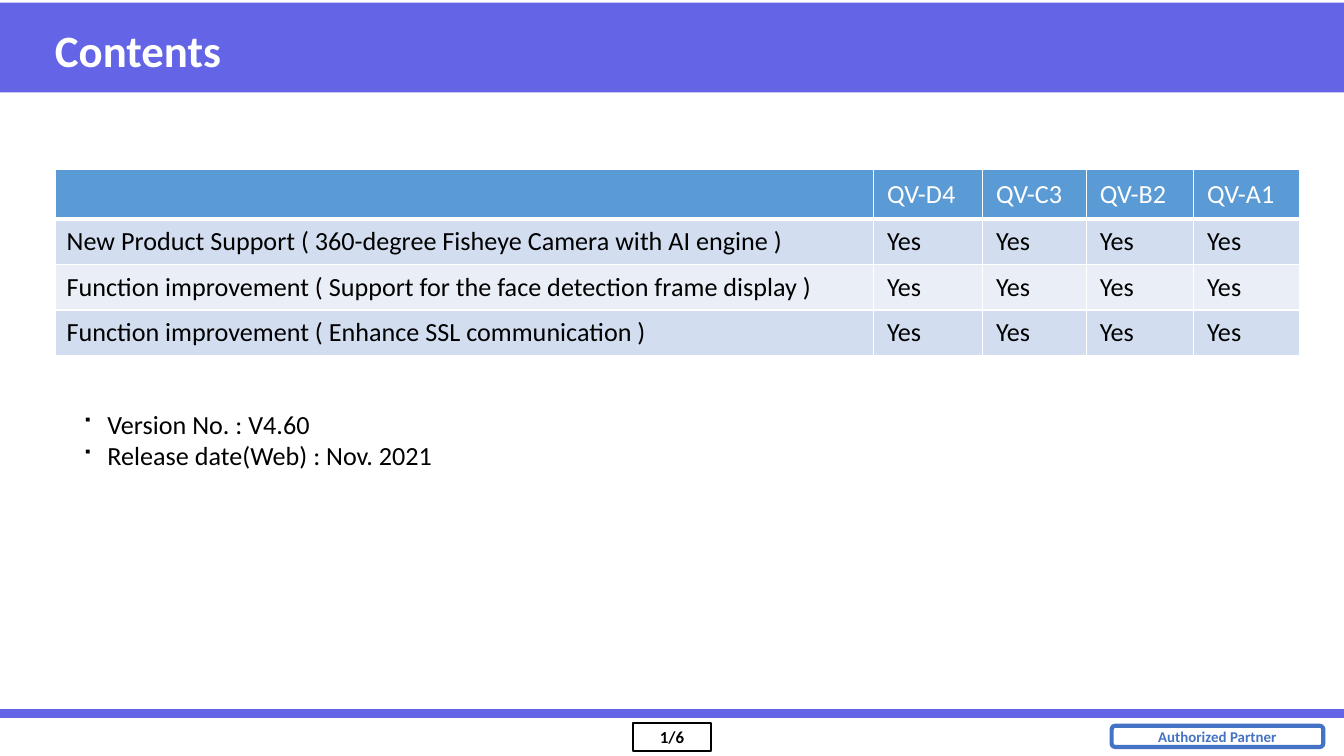
"""Build the contents slide with its support table and release notes."""
from dataclasses import dataclass

from lxml import etree
from pptx import Presentation
from pptx.dml.color import RGBColor
from pptx.enum.shapes import MSO_CONNECTOR, MSO_SHAPE
from pptx.enum.text import MSO_ANCHOR, PP_ALIGN
from pptx.oxml.ns import qn
from pptx.util import Cm, Pt

LINE = MSO_CONNECTOR.STRAIGHT
RECT = MSO_SHAPE.RECTANGLE
ROUND = MSO_SHAPE.ROUNDED_RECTANGLE
MIDDLE = MSO_ANCHOR.MIDDLE
TOP = MSO_ANCHOR.TOP
CENTER = PP_ALIGN.CENTER
LEFT = PP_ALIGN.LEFT

TITLE = "Contents"
MODELS = ["QV-D4", "QV-C3", "QV-B2", "QV-A1"]
ITEMS = [
    "New Product Support ( 360-degree Fisheye Camera with AI engine )",
    "Function improvement ( Support for the face detection frame display )",
    "Function improvement ( Enhance SSL communication )",
]
MARK = "Yes"
NOTES = ["Version No. : V4.60", "Release date(Web) : Nov. 2021"]
PAGE = "1/6"
BADGE = "Authorized Partner"

WIDTHS = [15.47, 2.06, 1.96, 2.03, 2.01]
HEAD, ROW = 0.94, 0.86
INDENT = 0.48


@dataclass(frozen=True)
class Theme:
    font: str = "Calibri"
    symbol: str = "Wingdings"
    band: str = "6464E6"
    blue: str = "4472C4"
    head: str = "5B9BD5"
    odd: str = "D2DEEF"
    even: str = "EAEFF7"
    white: str = "FFFFFF"
    black: str = "000000"
    title: int = 24
    body: int = 14
    page: int = 9
    badge: int = 8


THEME = Theme()


def color(code):
    return RGBColor.from_string(code)


def style(para, size, code, bold=False, align=LEFT):
    para.alignment = align
    font = para.font
    font.name, font.size, font.bold = THEME.font, Pt(size), bold
    font.color.rgb = color(code)


def add_box(slide, kind, place, fill=None, line=None, width=1):
    shape = slide.shapes.add_shape(kind, *map(Cm, place))
    shape.shadow.inherit = False
    if fill:
        shape.fill.solid()
        shape.fill.fore_color.rgb = color(fill)
    else:
        shape.fill.background()
    if line:
        shape.line.color.rgb = color(line)
        shape.line.width = Pt(width)
    else:
        shape.line.fill.background()
    return shape


def add_label(shape, text, size, code, wrap=True):
    frame = shape.text_frame
    frame.word_wrap = wrap
    frame.vertical_anchor = MIDDLE
    frame.margin_left = frame.margin_right = Cm(0.08)
    frame.margin_top = frame.margin_bottom = Cm(0.08)
    para = frame.paragraphs[0]
    para.text = text
    style(para, size, code, True, CENTER)


def add_text(slide, place, lines, size, code, bold=False, anchor=TOP, bullet=None):
    frame = slide.shapes.add_textbox(*map(Cm, place)).text_frame
    frame.word_wrap = True
    frame.vertical_anchor = anchor
    for index, text in enumerate(lines):
        para = frame.add_paragraph() if index else frame.paragraphs[0]
        para.text = text
        if bullet:
            props = para._p.get_or_add_pPr()
            props.set("marL", str(Cm(INDENT)))
            props.set("indent", str(-Cm(INDENT)))
            etree.SubElement(props, qn("a:buFont")).set("typeface", THEME.symbol)
            etree.SubElement(props, qn("a:buChar")).set("char", bullet)
        style(para, size, code, bold)


def add_edges(cell, top, bottom):
    props = cell._tc.get_or_add_tcPr()
    sides = {"lnL": 1, "lnR": 1, "lnT": top, "lnB": bottom}
    for index, (side, width) in enumerate(sides.items()):
        edge = etree.Element(qn("a:" + side), w=str(Pt(width)))
        fill = etree.SubElement(edge, qn("a:solidFill"))
        etree.SubElement(fill, qn("a:srgbClr")).set("val", THEME.white)
        props.insert(index, edge)


def add_grid(slide):
    rows = [["", *MODELS]] + [[item] + [MARK] * len(MODELS) for item in ITEMS]
    tall = [HEAD] + [ROW] * len(ITEMS)
    place = (1.04, 3.2, sum(WIDTHS), sum(tall))
    table = slide.shapes.add_table(
        len(rows), len(WIDTHS), *map(Cm, place)).table
    for col, width in zip(table.columns, WIDTHS):
        col.width = Cm(width)
    for r, texts in enumerate(rows):
        table.rows[r].height = Cm(tall[r])
        shade = THEME.odd if r % 2 else THEME.even
        ink = THEME.black if r else THEME.white
        for c, text in enumerate(texts):
            cell = table.cell(r, c)
            cell.fill.solid()
            cell.fill.fore_color.rgb = color(shade if r else THEME.head)
            cell.vertical_anchor = MIDDLE
            if r and not c:
                cell.margin_left, cell.margin_right = Cm(0.22), Cm(0.1)
            cell.text = text
            style(cell.text_frame.paragraphs[0], THEME.body, ink)
            add_edges(cell, 3 if r == 1 else 1, 1 if r else 3)


def add_rule(slide, wide, y):
    rule = slide.shapes.add_connector(LINE, 0, Cm(y), Cm(wide), Cm(y))
    rule.line.color.rgb = color(THEME.band)
    rule.line.width = Pt(4.5)
    etree.SubElement(rule._element.spPr, qn("a:effectLst"))


def main():
    wide, high = 25.4, 14.29
    deck = Presentation()
    deck.slide_width, deck.slide_height = Cm(wide), Cm(high)
    slide = deck.slides.add_slide(deck.slide_layouts[6])

    add_box(slide, RECT, (0, 0.05, wide, 1.7), fill=THEME.band)
    page = add_box(slide, RECT, (11.96, 13.67, 1.48, 0.52), line=THEME.black)
    add_label(page, PAGE, THEME.page, THEME.black)
    add_rule(slide, wide, 13.49)
    badge = add_box(slide, ROUND, (21.01, 13.72, 4, 0.4),
                    line=THEME.blue, width=2.25)
    add_label(badge, BADGE, THEME.badge, THEME.blue, wrap=False)

    add_text(slide, (0.79, 0.2, 23.52, 1.47), [TITLE],
             THEME.title, THEME.white, True, MIDDLE)
    add_grid(slide)
    add_text(slide, (1.3, 7.59, 18.85, 1.45), NOTES,
             THEME.body, THEME.black, bullet="■")
    deck.save("out.pptx")


if __name__ == "__main__":
    main()
